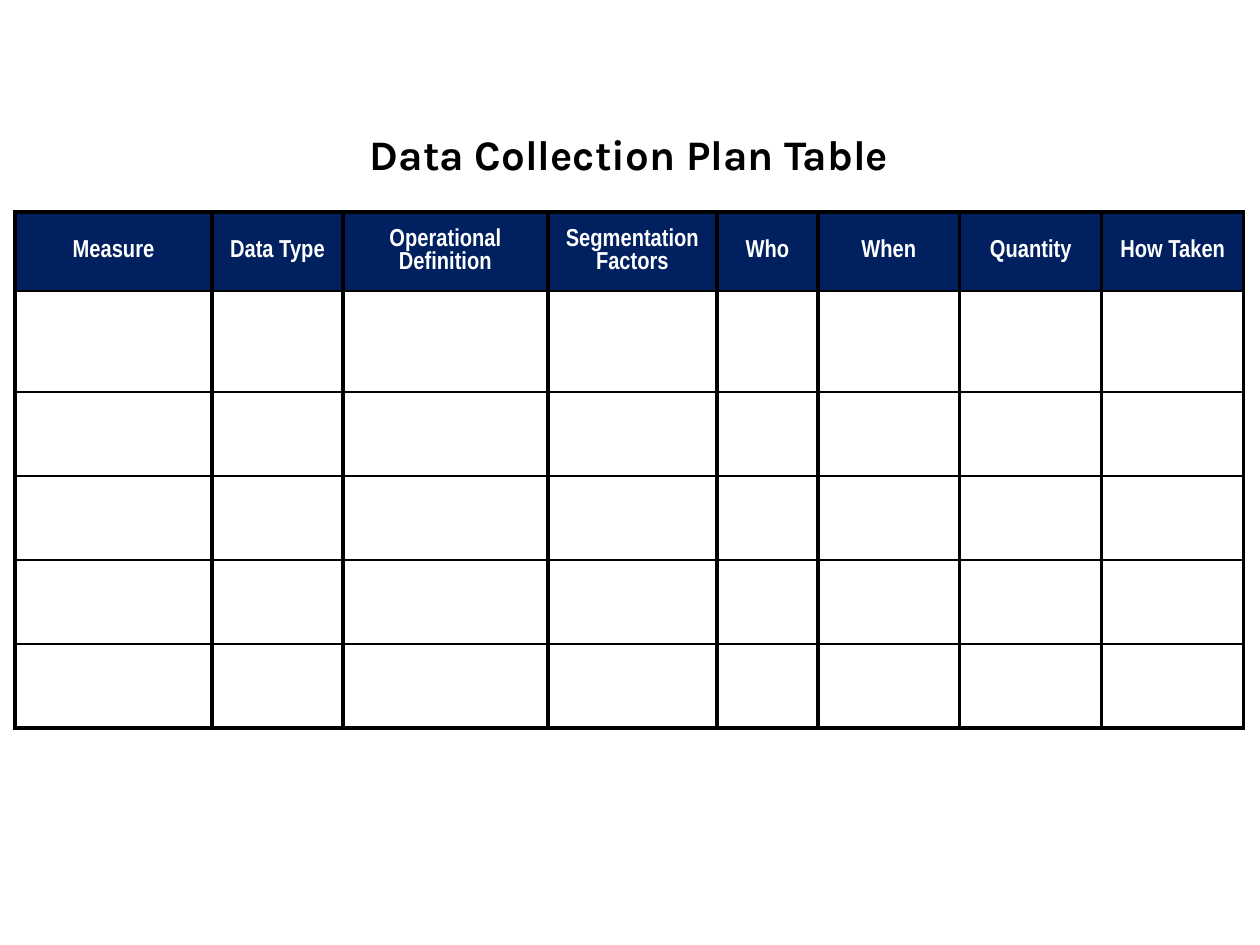
from lxml.etree import SubElement
from pptx import Presentation
from pptx.dml.color import RGBColor
from pptx.enum.text import MSO_ANCHOR as Anchor, PP_ALIGN as Align
from pptx.oxml.ns import qn
from pptx.util import Emu, Pt

PX = 914400 // 126
TITLE_ONLY = 5
HEADERS = ["Measure", "Data Type", "Operational Definition", "Segmentation Factors",
           "Who", "When", "Quantity", "How Taken"]
COL_WIDTHS = [197, 131, 205, 169, 101, 142, 142, 142]
ROW_HEIGHTS = [79, 101] + [84] * 4


def px(n):
    return Emu(n * PX)


def rgb(color):
    return RGBColor.from_string(color)


class PlanSlide:
    black, white, navy = "000000", "FFFFFF", "002060"
    title_font, table_font = "Karla", "Arial Narrow"
    thin, thick = 1, 2.25

    def __init__(self, prs):
        self.s = prs.slides.add_slide(prs.slide_layouts[TITLE_ONLY])

    def format_text(self, p, font, size, color):
        p.alignment = Align.CENTER
        for r in p.runs:
            r.font.name = font
            r.font.size = Pt(size)
            r.font.bold = True
            r.font.color.rgb = rgb(color)

    def title(self, text, x, y, w, h):
        sp = self.s.shapes.title
        sp.left, sp.top, sp.width, sp.height = map(px, (x, y, w, h))
        tf = sp.text_frame
        tf.text = text
        tf.word_wrap = True
        tf.vertical_anchor = Anchor.TOP
        self.format_text(tf.paragraphs[0], self.title_font, 24, self.black)

    def borders(self, cell, top, bottom):
        """Draw thick sides, with the given widths in points above and below."""
        tc_pr = cell._tc.get_or_add_tcPr()
        widths = {"lnL": self.thick, "lnR": self.thick, "lnT": top, "lnB": bottom}
        for tag, width in widths.items():
            ln = SubElement(tc_pr, qn(f"a:{tag}"), w=str(Pt(width)))
            fill = SubElement(ln, qn("a:solidFill"))
            SubElement(fill, qn("a:srgbClr"), val=self.black)

    def header_cell(self, cell, text):
        cell.fill.solid()
        cell.fill.fore_color.rgb = rgb(self.navy)
        cell.vertical_anchor = Anchor.MIDDLE
        cell.text_frame.text = text
        p = cell.text_frame.paragraphs[0]
        p.space_before = Pt(2.8)
        self.format_text(p, self.table_font, 14, self.white)

    def table(self, headers, x, y, col_widths, row_heights):
        last = len(row_heights) - 1
        table = self.s.shapes.add_table(
            len(row_heights), len(col_widths), px(x), px(y),
            px(sum(col_widths)), px(sum(row_heights))).table
        table.first_row = table.horz_banding = False
        for col, width in zip(table.columns, col_widths):
            col.width = px(width)
        for i, (row, height) in enumerate(zip(table.rows, row_heights)):
            row.height = px(height)
            for cell, header in zip(row.cells, headers):
                self.borders(cell,
                             top=self.thick if i == 0 else self.thin,
                             bottom=self.thick if i == last else self.thin)
                if i == 0:
                    self.header_cell(cell, header)
                else:
                    cell.fill.background()


def main():
    prs = Presentation()
    prs.slide_width, prs.slide_height = px(1260), px(945)
    plan = PlanSlide(prs)
    plan.title("Data Collection Plan Table", 62, 122, 1134, 158)
    plan.table(HEADERS, 15, 212, COL_WIDTHS, ROW_HEIGHTS)
    prs.save("out.pptx")


if __name__ == "__main__":
    main()
